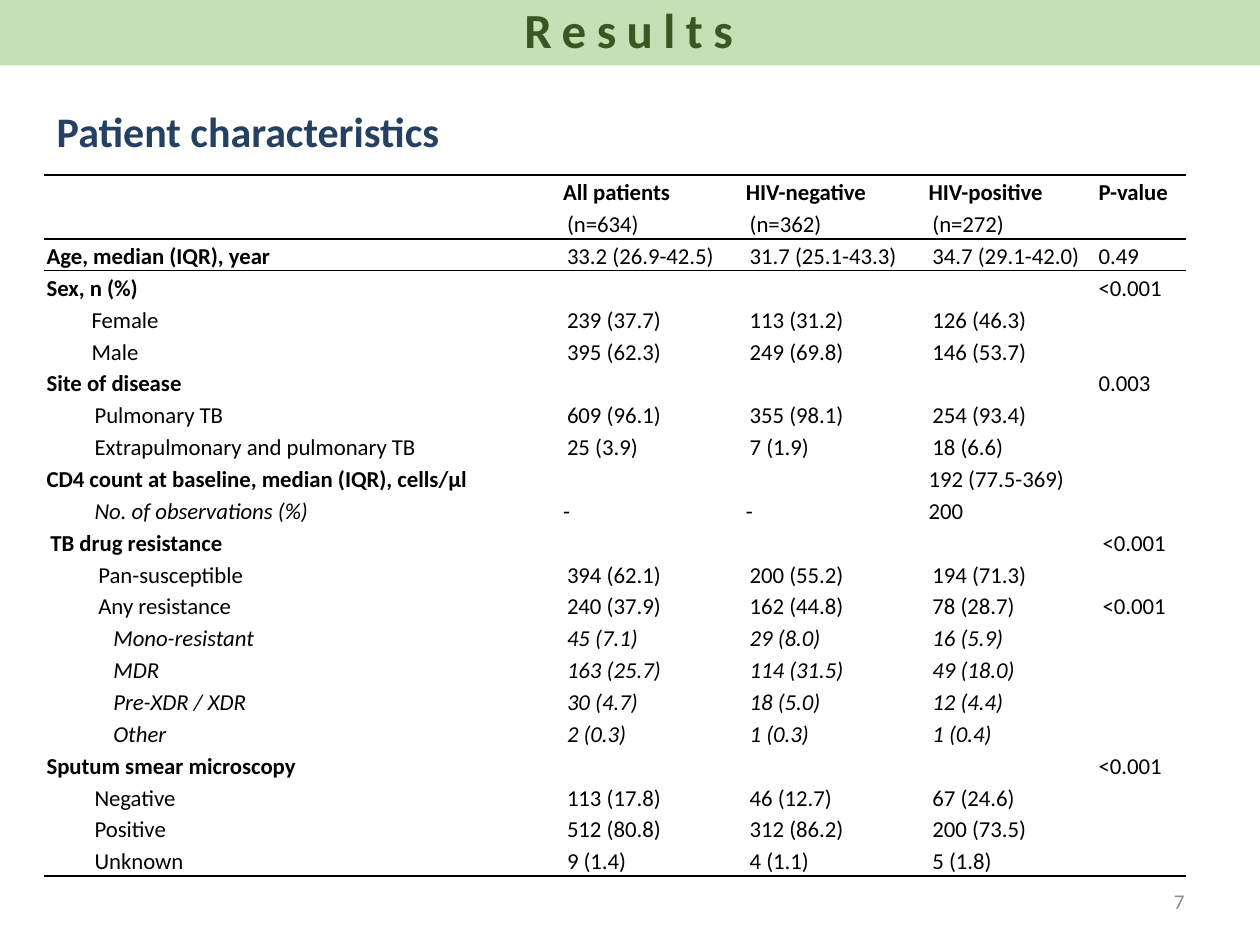
from typing import NamedTuple

from lxml import etree
from pptx import Presentation
from pptx.dml.color import RGBColor
from pptx.enum.shapes import MSO_SHAPE
from pptx.enum.text import MSO_ANCHOR, PP_ALIGN
from pptx.oxml.ns import qn
from pptx.util import Pt

RECTANGLE = MSO_SHAPE.RECTANGLE
MIDDLE = MSO_ANCHOR.MIDDLE
LEFT, CENTER, RIGHT = PP_ALIGN.LEFT, PP_ALIGN.CENTER, PP_ALIGN.RIGHT

BLACK = RGBColor(0x00, 0x00, 0x00)
NAVY = RGBColor(0x25, 0x40, 0x61)
GREY = RGBColor(0x8C, 0x8C, 0x8C)
PALE_GREEN = RGBColor(0xC5, 0xE0, 0xB4)
DARK_GREEN = RGBColor(0x38, 0x57, 0x23)

FONT = "Calibri"
TABLE_SIZE = 13
LINE_SPACING = 1.15
TIGHT, WIDE = 1.44, 3.6
SEX_INDENT, GROUP_INDENT, DETAIL_INDENT = 25.7, 27.4, 36
COLUMN_WIDTHS = (295.2, 104.4, 104.4, 97.2, 51.1)
ROW_HEIGHT = 18.2
NO_STYLE = "{2D5ABB26-0587-4C30-8999-92F81FD0307C}"


class Row(NamedTuple):
    label: str
    values: tuple[str, str, str] = ("", "", "")
    p_value: str = ""
    indent: float = 0
    edge_inset: float = TIGHT
    value_inset: float = WIDE
    label_columns: int = 1
    italic_label: bool = False
    italic_values: bool = False
    bold_values: bool = False


def group(label: str, *values: str, indent: float = GROUP_INDENT,
          p_value: str = "", edge_inset: float = TIGHT) -> Row:
    return Row(label, values, p_value, indent, edge_inset)


def detail(label: str, *values: str) -> Row:
    return Row(label, values, indent=DETAIL_INDENT, edge_inset=WIDE,
               italic_label=True, italic_values=True)


ROWS = (
    Row("", ("All patients", "HIV-negative", "HIV-positive"), "P-value",
        value_inset=TIGHT, bold_values=True),
    Row("", ("(n=634)", "(n=362)", "(n=272)")),
    Row("Age, median (IQR), year",
        ("33.2 (26.9-42.5)", "31.7 (25.1-43.3)", "34.7 (29.1-42.0)"), "0.49"),
    Row("Sex, n (%)", p_value="<0.001"),
    group("Female", "239 (37.7)", "113 (31.2)", "126 (46.3)", indent=SEX_INDENT),
    group("Male", "395 (62.3)", "249 (69.8)", "146 (53.7)", indent=SEX_INDENT),
    Row("Site of disease", p_value="0.003", label_columns=2),
    group("Pulmonary TB", "609 (96.1)", "355 (98.1)", "254 (93.4)"),
    group("Extrapulmonary and pulmonary TB", "25 (3.9)", "7 (1.9)", "18 (6.6)"),
    Row("CD4 count at baseline, median (IQR), cells/µl", ("", "", "192 (77.5-369)"),
        value_inset=TIGHT, label_columns=3),
    Row("No. of observations (%)", ("-", "-", "200"), indent=GROUP_INDENT,
        value_inset=TIGHT, italic_label=True),
    Row("TB drug resistance", p_value="<0.001", edge_inset=WIDE, label_columns=3),
    group("Pan-susceptible", "394 (62.1)", "200 (55.2)", "194 (71.3)", edge_inset=WIDE),
    group("Any resistance", "240 (37.9)", "162 (44.8)", "78 (28.7)",
          p_value="<0.001", edge_inset=WIDE),
    detail("Mono-resistant", "45 (7.1)", "29 (8.0)", "16 (5.9)"),
    detail("MDR", "163 (25.7)", "114 (31.5)", "49 (18.0)"),
    detail("Pre-XDR / XDR", "30 (4.7)", "18 (5.0)", "12 (4.4)"),
    detail("Other", "2 (0.3)", "1 (0.3)", "1 (0.4)"),
    Row("Sputum smear microscopy", p_value="<0.001", label_columns=2),
    group("Negative", "113 (17.8)", "46 (12.7)", "67 (24.6)"),
    group("Positive", "512 (80.8)", "312 (86.2)", "200 (73.5)"),
    group("Unknown", "9 (1.4)", "4 (1.1)", "5 (1.8)"),
)
RULED_SIDES = {0: ("lnT",), 1: ("lnB",), 2: ("lnT",), len(ROWS) - 1: ("lnB",)}


def write(shape, text: str, size: float, color: RGBColor, align, bold: bool = False):
    """Fill a shape with one formatted paragraph and return its run."""
    frame = shape.text_frame
    frame.text = text
    frame.word_wrap = True
    frame.vertical_anchor = MIDDLE
    para = frame.paragraphs[0]
    para.alignment = align
    span = para.runs[0]
    span.font.name, span.font.size, span.font.bold = FONT, Pt(size), bold
    span.font.color.rgb = color
    return span


def rule_side(cell, side: str) -> None:
    line = etree.Element(qn(f"a:{side}"), w=str(Pt(1)))
    fill = etree.SubElement(line, qn("a:solidFill"))
    etree.SubElement(fill, qn("a:srgbClr"), val=str(BLACK))
    cell._tc.get_or_add_tcPr().insert(0, line)


def write_cell(cell, text: str, inset: float, indent: float, bold: bool, italic: bool) -> None:
    cell.margin_left = cell.margin_right = Pt(inset)
    cell.margin_top = cell.margin_bottom = 0
    cell.vertical_anchor = MIDDLE
    cell.fill.background()
    para = cell.text_frame.paragraphs[0]
    para.line_spacing = LINE_SPACING
    if not text:
        etree.SubElement(para._p, qn("a:endParaRPr"), sz=str(TABLE_SIZE * 100))
        return
    para.text = text
    if indent:
        para._p.get_or_add_pPr().set("marL", str(Pt(indent)))
    font = para.runs[0].font
    font.name, font.size, font.bold, font.italic = FONT, Pt(TABLE_SIZE), bold, italic
    font.color.rgb = BLACK


def add_characteristics(page) -> None:
    table = page.shapes.add_table(
        len(ROWS), len(COLUMN_WIDTHS), Pt(25.2), Pt(100.1),
        Pt(sum(COLUMN_WIDTHS)), Pt(ROW_HEIGHT * len(ROWS))).table
    table.first_row = table.horz_banding = False
    table._tbl.tblPr.find(qn("a:tableStyleId")).text = NO_STYLE
    for column, width in zip(table.columns, COLUMN_WIDTHS):
        column.width = Pt(width)
    for index, row in enumerate(ROWS):
        table.rows[index].height = Pt(ROW_HEIGHT)
        cells = [table.cell(index, column) for column in range(len(COLUMN_WIDTHS))]
        write_cell(cells[0], row.label, row.edge_inset, row.indent,
                   not row.indent, row.italic_label)
        for cell, value in zip(cells[1:4], row.values):
            write_cell(cell, value, row.value_inset, 0, row.bold_values, row.italic_values)
        write_cell(cells[4], row.p_value, row.edge_inset, 0, row.bold_values, False)
        if row.label_columns > 1:
            cells[0].merge(cells[row.label_columns - 1])
        for side in RULED_SIDES.get(index, ()):
            for cell in cells:
                rule_side(cell, side)


def add_banner(page) -> None:
    banner = page.shapes.add_shape(RECTANGLE, Pt(-1.4), 0, Pt(721.4), Pt(37.4))
    banner.shadow.inherit = False
    banner.fill.solid()
    banner.fill.fore_color.rgb = PALE_GREEN
    banner.line.fill.background()
    span = write(banner, "Results", 28, DARK_GREEN, CENTER, bold=True)
    span.font._element.set("spc", "600")
    banner.text_frame.paragraphs[0].line_spacing = 0.9


def main() -> None:
    deck = Presentation()
    deck.slide_width, deck.slide_height = Pt(720), Pt(540)
    page = deck.slides.add_slide(deck.slide_layouts[5])
    title = page.shapes.title
    title.left, title.top, title.width, title.height = Pt(25.2), Pt(49), Pt(680.4), Pt(51.1)
    write(title, "Patient characteristics", 24, NAVY, LEFT, bold=True)
    add_banner(page)
    number = page.shapes.add_textbox(Pt(516.2), Pt(500.4), Pt(167.8), Pt(28.8))
    write(number, "7", 12, GREY, RIGHT)
    add_characteristics(page)
    deck.save("out.pptx")


if __name__ == "__main__":
    main()
